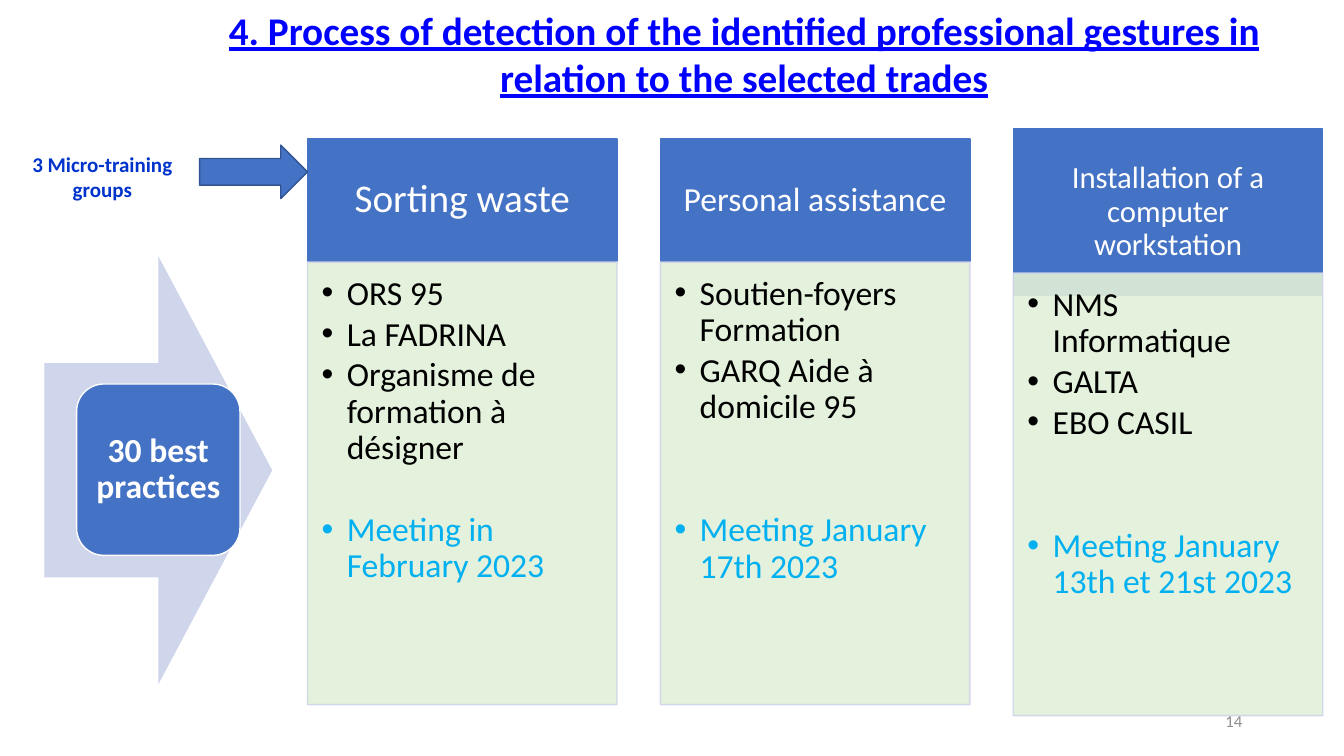
from lxml import etree
from pptx import Presentation
from pptx.dml.color import RGBColor
from pptx.enum.shapes import MSO_SHAPE
from pptx.enum.text import MSO_ANCHOR, PP_ALIGN
from pptx.oxml.ns import qn
from pptx.util import Inches, Pt

RECT, ROUND, ARROW = MSO_SHAPE.RECTANGLE, MSO_SHAPE.ROUNDED_RECTANGLE, MSO_SHAPE.RIGHT_ARROW
LEFT, CENTER, RIGHT = PP_ALIGN.LEFT, PP_ALIGN.CENTER, PP_ALIGN.RIGHT
TOP, MIDDLE = MSO_ANCHOR.TOP, MSO_ANCHOR.MIDDLE
BLUE, WHITE, BLACK, SKY = "4472C4", "FFFFFF", "000000", "00B0F0"
GREEN, PALE = "E2F0D9", "CFD5EA"
COLUMN_LEFT, COLUMN_STEP, COLUMN_W, BODY_H = 3.05, 3.5, 3.07, 4.39
BLANK_LINE = 29.5

COLUMNS = [
    dict(title="Sorting waste", size=28, inset=0.22, top=1.38, height=1.21, body=2.6,
         items=["ORS 95", "La FADRINA", "Organisme de formation à désigner"],
         gap=1, meeting="Meeting in February 2023"),
    dict(title="Personal assistance", size=24, inset=0.19, top=1.38, height=1.21, body=2.6,
         items=["Soutien-foyers Formation", "GARQ Aide à domicile 95"],
         gap=2, meeting="Meeting January 17th 2023"),
    dict(title="Installation of a computer workstation", size=22, inset=0.17,
         top=1.28, height=1.65, body=2.71,
         items=["NMS Informatique", "GALTA", "EBO CASIL"],
         gap=2, meeting="Meeting January 13th et 21st 2023"),
]


def rgb(color):
    return RGBColor.from_string(color)


class SlideBuilder:
    """Holds the font and current slide, and draws each kind of element."""

    def __init__(self, slide, font="Calibri"):
        self.slide, self.font = slide, font

    def shape(self, kind, box, fill, line=None, alpha=None):
        sp = self.slide.shapes.add_shape(kind, *map(Inches, box))
        sp.shadow.inherit = False
        sp.fill.solid()
        sp.fill.fore_color.rgb = rgb(fill)
        if line:
            sp.line.color.rgb = rgb(line)
            sp.line.width = Pt(1)
        else:
            sp.line.fill.background()
        if alpha:
            for clr in sp._element.spPr.iter(qn("a:srgbClr")):
                etree.SubElement(clr, qn("a:alpha"), val=str(alpha * 1000))
        return sp

    def frame(self, sp, insets=(0.1, 0.05, 0.1, 0.05), anchor=TOP):
        tf = sp.text_frame
        tf.word_wrap, tf.vertical_anchor = True, anchor
        for side, inset in zip(("left", "top", "right", "bottom"), insets):
            setattr(tf, f"margin_{side}", Inches(inset))
        return tf

    def add_text(self, p, text, color, size, bold=False, underline=False, **layout):
        for name, value in layout.items():
            setattr(p, name, value)
        r = p.add_run()
        r.text = text
        r.font.color.rgb = rgb(color)
        style = dict(name=self.font, size=Pt(size), bold=bold, underline=underline)
        for name, value in style.items():
            setattr(r.font, name, value)

    def label(self, box, text, color, size, align=CENTER, anchor=TOP, **style):
        sp = self.slide.shapes.add_textbox(*map(Inches, box))
        tf = self.frame(sp, anchor=anchor)
        self.add_text(tf.paragraphs[0], text, color, size, alignment=align, **style)

    def block(self, kind, box, line, text, size, insets, bold=False):
        tf = self.frame(self.shape(kind, box, BLUE, line), insets, MIDDLE)
        self.add_text(tf.paragraphs[0], text, WHITE, size, bold, alignment=CENTER,
                      line_spacing=0.9)

    def bullet(self, p, text, color, before=0):
        self.add_text(p, text, color, 24, alignment=LEFT, line_spacing=0.9,
                      space_before=Pt(before), space_after=Pt(3.2))
        pPr = p._p.get_or_add_pPr()
        pPr.set("marL", str(Inches(0.25)))
        pPr.set("indent", str(-Inches(0.25)))
        etree.SubElement(pPr, qn("a:buFont"), typeface="Arial")
        etree.SubElement(pPr, qn("a:buChar"), char="•")

    def column(self, left, title, size, inset, top, height, body, items, gap, meeting):
        pad = inset * 0.57
        self.block(RECT, (left, top, COLUMN_W, height), BLUE, title, size, (inset, pad, inset, pad))
        sp = self.shape(RECT, (left, body, COLUMN_W, BODY_H), GREEN, PALE, alpha=90)
        tf = self.frame(sp, (0.14, 0.14, 0.19, 0.21))
        self.bullet(tf.paragraphs[0], items[0], BLACK)
        for item in items[1:]:
            self.bullet(tf.add_paragraph(), item, BLACK)
        self.bullet(tf.add_paragraph(), meeting, SKY, gap * BLANK_LINE)


def main():
    prs = Presentation()
    prs.slide_width, prs.slide_height = Inches(13.33), Inches(7.5)
    s = SlideBuilder(prs.slides.add_slide(prs.slide_layouts[6]))
    s.label((9.42, 6.95, 3, 0.4), "14", "8C8C8C", 12, RIGHT, MIDDLE)
    for i, column in enumerate(COLUMNS):
        s.column(COLUMN_LEFT + i * COLUMN_STEP, **column)
    s.shape(ARROW, (0.44, 2.54, 2.26, 4.25), PALE)
    s.block(ROUND, (0.76, 3.81, 1.62, 1.7), WHITE, "30 best practices", 24, [0.1] * 4, bold=True)
    s.label((1.82, 0.01, 11.12, 1.04),
            "4. Process of detection of the identified professional gestures in "
            "relation to the selected trades", "0000FF", 28, bold=True, underline=True)
    s.shape(ARROW, (1.98, 1.44, 1.07, 0.53), BLUE, "325491")
    s.label((0.13, 1.45, 1.77, 0.61), "3 Micro-training groups", "0033CC", 15, bold=True)
    prs.save("out.pptx")


if __name__ == "__main__":
    main()
